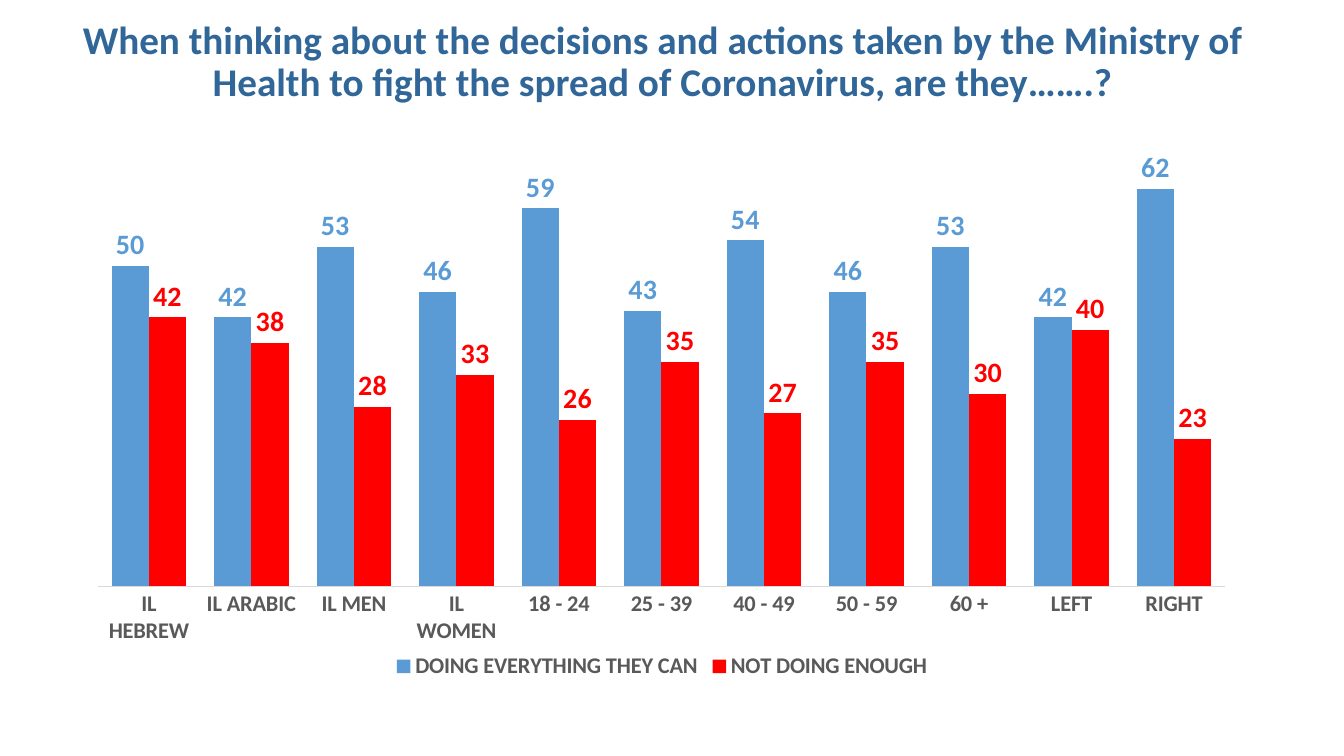
"""Build a slide with a clustered column chart of survey answers."""
import pptx
import pptx.chart.data
import pptx.dml.color
import pptx.enum.chart
import pptx.enum.text
import pptx.oxml
import pptx.oxml.ns
import pptx.util

Cm = pptx.util.Cm
Pt = pptx.util.Pt
RGB = pptx.dml.color.RGBColor
NAVY = RGB(0x30, 0x66, 0x98)
BLUE = RGB(0x5B, 0x9B, 0xD5)
RED = RGB(0xFF, 0x00, 0x00)
GREY = RGB(0x59, 0x59, 0x59)
PALE = RGB(0xD9, 0xD9, 0xD9)

TITLE = ("When thinking about the decisions and actions taken by the Ministry of "
         "Health to fight the spread of Coronavirus, are they…….?")
GROUPS = ["IL HEBREW", "IL ARABIC", "IL MEN", "IL WOMEN", "18 - 24", "25 - 39",
          "40 - 49", "50 - 59", "60 +", "LEFT", "RIGHT"]
ANSWERS = [
    ("DOING EVERYTHING THEY CAN", BLUE, [50, 42, 53, 46, 59, 43, 54, 46, 53, 42, 62]),
    ("NOT DOING ENOUGH", RED, [42, 38, 28, 33, 26, 35, 27, 35, 30, 40, 23]),
]
PLOT = {"x": 0.013, "y": 0.052, "w": 0.973, "h": 0.778}


def apply(target, values):
    for name, value in values.items():
        setattr(target, name, value)


class Deck:
    def __init__(self, face):
        self.face = face
        self.show = pptx.Presentation()
        apply(self.show, {"slide_width": Cm(33.87), "slide_height": Cm(19.05)})
        self.slide = self.show.slides.add_slide(self.show.slide_layouts[6])

    def style(self, font, size, color):
        apply(font, {"name": self.face, "size": Pt(size), "bold": True})
        font.color.rgb = color

    def title(self, text, box, size, color):
        frame = self.slide.shapes.add_textbox(*map(Cm, box)).text_frame
        apply(frame, {"word_wrap": True,
                      "vertical_anchor": pptx.enum.text.MSO_ANCHOR.MIDDLE})
        para = frame.paragraphs[0]
        apply(para, {"text": text, "line_spacing": 0.9,
                     "alignment": pptx.enum.text.PP_ALIGN.CENTER})
        self.style(para.runs[0].font, size, color)

    def columns(self, groups, answers, box):
        data = pptx.chart.data.CategoryChartData()
        data.categories = groups
        for name, _, values in answers:
            data.add_series(name, values)
        kind = pptx.enum.chart.XL_CHART_TYPE.COLUMN_CLUSTERED
        chart = self.slide.shapes.add_chart(kind, *map(Cm, box), data).chart
        apply(chart, {"has_title": False, "has_legend": True})
        apply(chart.font, {"name": self.face, "size": Pt(10)})
        apply(chart.legend, {"include_in_layout": False,
                             "position": pptx.enum.chart.XL_LEGEND_POSITION.BOTTOM})
        self.style(chart.legend.font, 16, GREY)
        self.axes(chart)
        plot = chart.plots[0]
        apply(plot, {"gap_width": 75, "overlap": 0, "vary_by_categories": False})
        for series, (_, color, _) in zip(plot.series, answers):
            self.paint(series, color)
        self.place(chart, PLOT)

    def axes(self, chart):
        none = pptx.enum.chart.XL_TICK_MARK.NONE
        axis = chart.category_axis
        apply(axis, {"major_tick_mark": none, "minor_tick_mark": none})
        self.style(axis.tick_labels.font, 16, GREY)
        axis.format.line.width = Pt(0.75)
        axis.format.line.color.rgb = PALE
        apply(chart.value_axis, {"visible": False, "has_major_gridlines": False,
                                 "minimum_scale": 0, "maximum_scale": 70})

    def paint(self, series, color):
        series.invert_if_negative = False
        series.format.fill.solid()
        series.format.fill.fore_color.rgb = color
        labels = series.data_labels
        apply(labels, {"show_value": True,
                       "position": pptx.enum.chart.XL_LABEL_POSITION.OUTSIDE_END})
        self.style(labels.font, 20, color)

    def place(self, chart, spots):
        qn = pptx.oxml.ns.qn
        area = chart.plots[0]._element.getparent()
        for old in area.findall(qn("c:layout")):
            area.remove(old)
        modes = '<c:layoutTarget val="inner"/><c:xMode val="edge"/><c:yMode val="edge"/>'
        sizes = "".join(f'<c:{key} val="{spot}"/>' for key, spot in spots.items())
        area.insert(0, pptx.oxml.parse_xml(
            f'<c:layout {pptx.oxml.ns.nsdecls("c")}><c:manualLayout>'
            f'{modes}{sizes}</c:manualLayout></c:layout>'))


def main():
    deck = Deck("Calibri")
    deck.title(TITLE, (1.83, 0.46, 29.72, 2.26), 28, NAVY)
    deck.columns(GROUPS, ANSWERS, (2.08, 2.72, 29.21, 14.53))
    deck.show.save("out.pptx")


if __name__ == "__main__":
    main()
